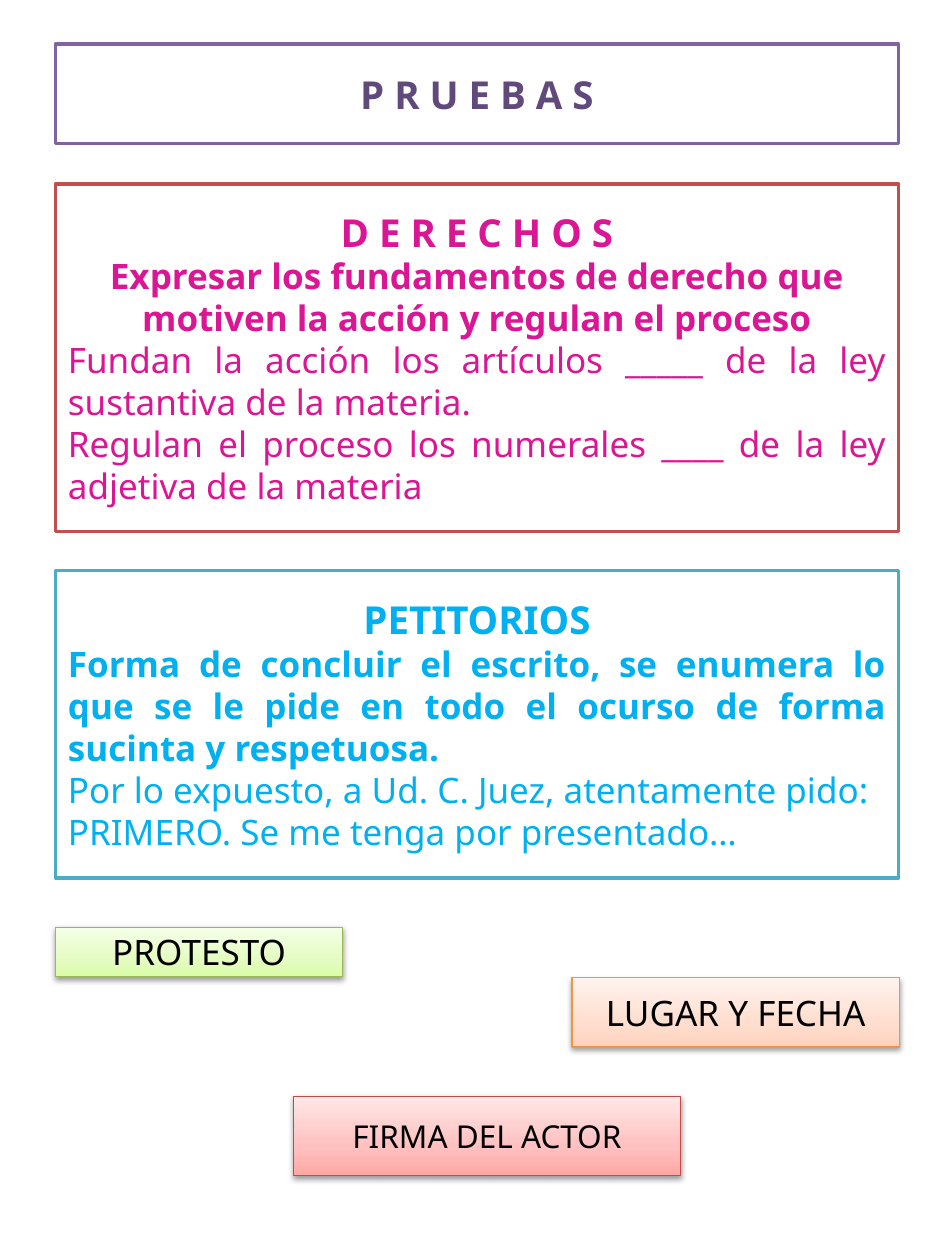
from lxml import etree
from pptx import Presentation
from pptx.dml.color import RGBColor
from pptx.enum import shapes, text
from pptx.oxml.ns import qn
from pptx.util import Inches, Pt

FONT = "Noto Sans"
WHITE = RGBColor(0xFF, 0xFF, 0xFF)
BLACK = RGBColor(0, 0, 0)
PURPLE, PURPLE_TEXT = RGBColor(0x80, 0x64, 0xA2), RGBColor(0x60, 0x4A, 0x7B)
RED, PINK_TEXT = RGBColor(0xC0, 0x50, 0x4D), RGBColor(0xDA, 0x16, 0x94)
AQUA, BLUE_TEXT = RGBColor(0x4B, 0xAC, 0xC6), RGBColor(0x00, 0xB0, 0xF0)
GREEN_EDGE = RGBColor(0x98, 0xB9, 0x55)
ORANGE_EDGE = RGBColor(0xF6, 0x92, 0x40)
RED_EDGE = RGBColor(0xBF, 0x4C, 0x48)
GREENS = [RGBColor(0xDA, 0xFD, 0xA7), RGBColor(0xE4, 0xFC, 0xC2), RGBColor(0xF5, 0xFF, 0xE7)]
ORANGES = [RGBColor(0xFF, 0xD2, 0xBD), RGBColor(0xFF, 0xDE, 0xD0), RGBColor(0xFF, 0xF2, 0xED)]
REDS = [RGBColor(0xFF, 0xA6, 0xA5), RGBColor(0xFF, 0xC0, 0xBF), RGBColor(0xFF, 0xE7, 0xE7)]
STOPS = [0, 35, 100]

CENTER, JUSTIFY = text.PP_ALIGN.CENTER, text.PP_ALIGN.JUSTIFY
LEFT, WIDTH = 0.44, 6.69

# Sections: top, height, line colour, text colour, (text, size, bold, alignment)
SECTIONS = [
    (0.35, 0.79, PURPLE, PURPLE_TEXT, [("P R U E B A S", 22, True, CENTER)]),
    (1.46, 2.76, RED, PINK_TEXT, [
        ("D E R E C H O S", 22, True, CENTER),
        ("Expresar los fundamentos de derecho que motiven la acción y regulan el proceso",
         20, True, CENTER),
        ("Fundan la acción los artículos _____ de la ley sustantiva de la materia.",
         20, False, JUSTIFY),
        ("Regulan el proceso los numerales ____ de la ley adjetiva de la materia",
         20, False, JUSTIFY),
    ]),
    (4.53, 2.44, AQUA, BLUE_TEXT, [
        ("PETITORIOS", 22, True, CENTER),
        ("Forma de concluir el escrito, se enumera lo que se le pide en todo el ocurso "
         "de forma sucinta y respetuosa.", 20, True, JUSTIFY),
        ("Por lo expuesto, a Ud. C. Juez, atentamente pido:", 20, False, JUSTIFY),
        ("PRIMERO. Se me tenga por presentado…", 20, False, JUSTIFY),
    ]),
]

# Closing labels: text, size, position, line colour, gradient from bottom to top
LABELS = [
    ("PROTESTO", 20, (LEFT, 7.36, 2.28, 0.39), GREEN_EDGE, GREENS),
    ("LUGAR Y FECHA", 20, (4.54, 7.76, 2.6, 0.55), ORANGE_EDGE, ORANGES),
    ("FIRMA DEL ACTOR", 18, (2.33, 8.7, 3.07, 0.63), RED_EDGE, REDS),
]


def add_box(page, place, edge, weight, color, lines):
    box = page.shapes.add_shape(shapes.MSO_SHAPE.RECTANGLE, *map(Inches, place))
    box.shadow.inherit = False
    box.line.color.rgb = edge
    box.line.width = Pt(weight)
    frame = box.text_frame
    frame.word_wrap = True
    frame.vertical_anchor = text.MSO_ANCHOR.MIDDLE
    for i, (words, size, bold, align) in enumerate(lines):
        para = frame.add_paragraph() if i else frame.paragraphs[0]
        para.text = words
        para.alignment = align
        para.font.name = FONT
        para.font.size = Pt(size)
        para.font.bold = bold
        para.font.color.rgb = color
    return box


def fill_gradient(box, colors):
    box.fill.gradient()
    box.fill.gradient_angle = 90
    stop_list = box.element.spPr.find(".//" + qn("a:gsLst"))
    for stop in list(stop_list):
        stop_list.remove(stop)
    for position, color in zip(STOPS, colors):
        stop = etree.SubElement(stop_list, qn("a:gs"), pos=str(position * 1000))
        etree.SubElement(stop, qn("a:srgbClr"), val=str(color))


def add_shadow(box):
    effects = box.element.spPr.find(qn("a:effectLst"))
    shadow = etree.SubElement(effects, qn("a:outerShdw"), blurRad="40000",
                              dist="20000", dir="5400000", rotWithShape="0")
    color = etree.SubElement(shadow, qn("a:srgbClr"), val=str(BLACK))
    etree.SubElement(color, qn("a:alpha"), val="38000")


deck = Presentation()
deck.slide_width, deck.slide_height = Inches(7.5), Inches(10)
page = deck.slides.add_slide(deck.slide_layouts[6])

# Outlined sections
for top, height, edge, color, lines in SECTIONS:
    box = add_box(page, (LEFT, top, WIDTH, height), edge, 2, color, lines)
    box.fill.solid()
    box.fill.fore_color.rgb = WHITE

# Shaded closing labels
for words, size, place, edge, colors in LABELS:
    box = add_box(page, place, edge, 0.75, BLACK, [(words, size, False, CENTER)])
    fill_gradient(box, colors)
    add_shadow(box)

deck.save("out.pptx")
